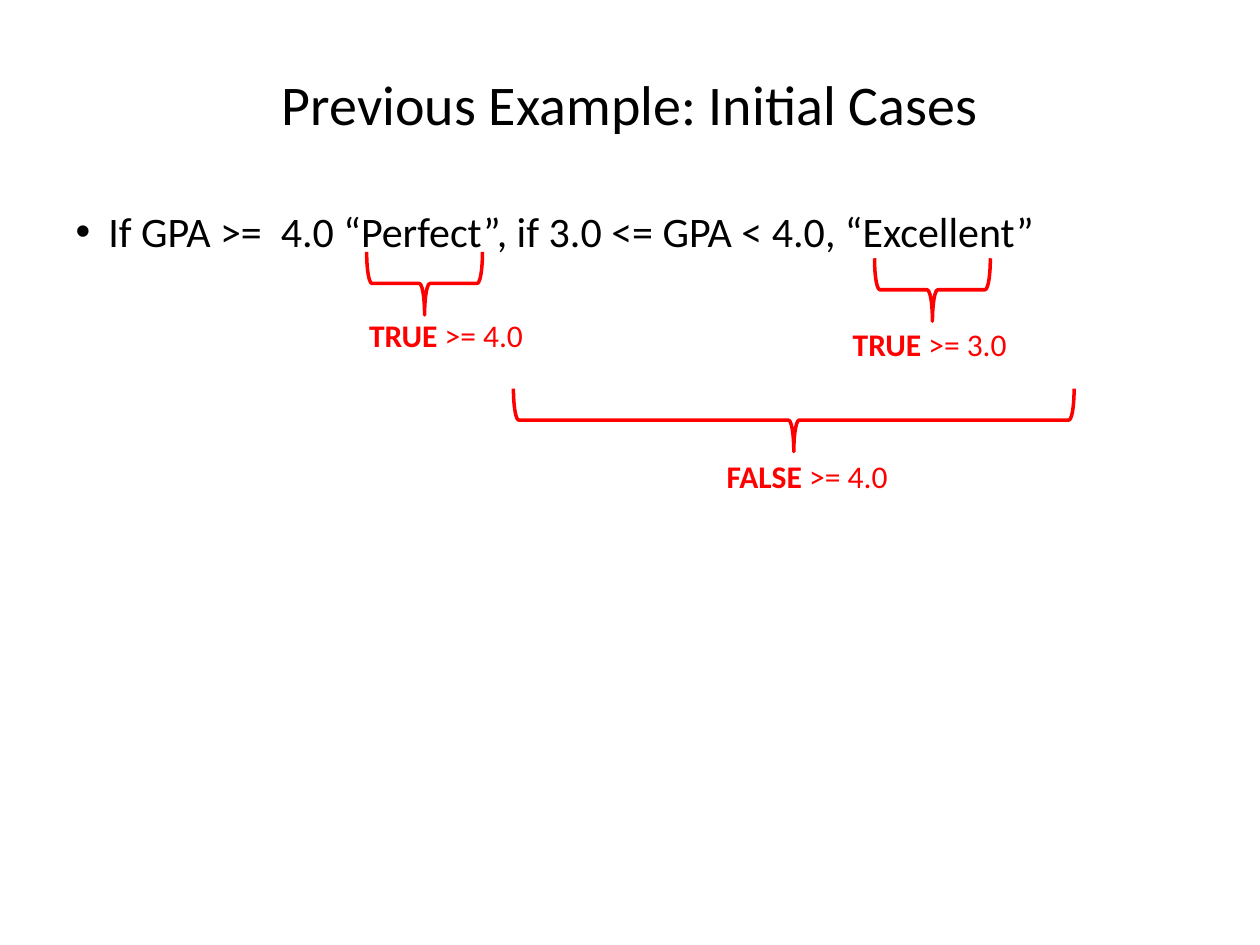
from pptx import Presentation
from pptx.dml.color import RGBColor
from pptx.enum.shapes import MSO_SHAPE
from pptx.enum.text import MSO_ANCHOR, MSO_AUTO_SIZE, PP_ALIGN
from pptx.util import Pt

BRACE = MSO_SHAPE.RIGHT_BRACE
MIDDLE, TOP = MSO_ANCHOR.MIDDLE, MSO_ANCHOR.TOP
CENTER, LEFT = PP_ALIGN.CENTER, PP_ALIGN.LEFT
FIXED = MSO_AUTO_SIZE.NONE
BLACK, RED = "000000", "FF0000"

# Content
TITLE = "Previous Example: Initial Cases"
RULE = "If GPA >=  4.0 “Perfect”, if 3.0 <= GPA < 4.0, “Excellent”"

# Each case: outcome, condition, brace (centre x, top, span), label (left, top, width)
CASES = [
    ("TRUE", " >= 4.0", (242.6, 144, 66.2), (203.8, 177.1, 105.1)),
    ("FALSE ", ">= 4.0", (453.6, 222.1, 320.4), (408.2, 257.8, 354.2)),
    ("TRUE", " >= 3.0", (532.8, 147.6, 66.2), (480.2, 182.2, 145.4)),
]
BRACE_DEPTH = 36
LABEL_HEIGHT = 30.2


def rgb(hex_code):
    return RGBColor.from_string(hex_code)


def place(shape, left, top, width, height):
    shape.left, shape.top = Pt(left), Pt(top)
    shape.width, shape.height = Pt(width), Pt(height)


def style(paragraph, size, color, align):
    paragraph.alignment = align
    paragraph.font.name = "Calibri"
    paragraph.font.size = Pt(size)
    paragraph.font.color.rgb = rgb(color)


def fill_placeholder(placeholder, text, box, size, align, anchor):
    place(placeholder, *box)
    frame = placeholder.text_frame
    frame.text = text
    frame.auto_size = FIXED
    frame.vertical_anchor = anchor
    style(frame.paragraphs[0], size, BLACK, align)
    return frame.paragraphs[0]


def add_brace(shapes, center, top, span):
    # A quarter turn swaps the brace's width and height around its centre
    left = center - BRACE_DEPTH / 2
    unturned_top = top + (BRACE_DEPTH - span) / 2
    brace = shapes.add_shape(BRACE, Pt(left), Pt(unturned_top), Pt(BRACE_DEPTH), Pt(span))
    brace.rotation = 90
    brace.shadow.inherit = False
    brace.fill.background()
    brace.line.color.rgb = rgb(RED)
    brace.line.width = Pt(2)


def add_label(shapes, outcome, condition, left, top, width):
    label = shapes.add_textbox(Pt(left), Pt(top), Pt(width), Pt(LABEL_HEIGHT))
    label.text_frame.word_wrap = True
    paragraph = label.text_frame.paragraphs[0]
    style(paragraph, 18, RED, LEFT)
    for text, bold in ((outcome, True), (condition, False)):
        run = paragraph.add_run()
        run.text = text
        run.font.bold = bold


def main():
    deck = Presentation()
    deck.slide_width, deck.slide_height = Pt(720), Pt(540)
    slide = deck.slides.add_slide(deck.slide_layouts[1])

    # Title and rule
    title, body = slide.placeholders
    fill_placeholder(title, TITLE, (36, 21.6, 648, 74.2), 32, CENTER, MIDDLE)
    rule = fill_placeholder(body, RULE, (36, 113.8, 594, 48.2), 24, LEFT, TOP)
    indent = rule._p.get_or_add_pPr()
    indent.set("marL", str(Pt(18.7)))
    indent.set("indent", str(-Pt(18.7)))

    # Braces with their labels
    for outcome, condition, brace, label in CASES:
        case = slide.shapes.add_group_shape()
        add_brace(case.shapes, *brace)
        add_label(case.shapes, outcome, condition, *label)

    deck.save("out.pptx")


if __name__ == "__main__":
    main()
